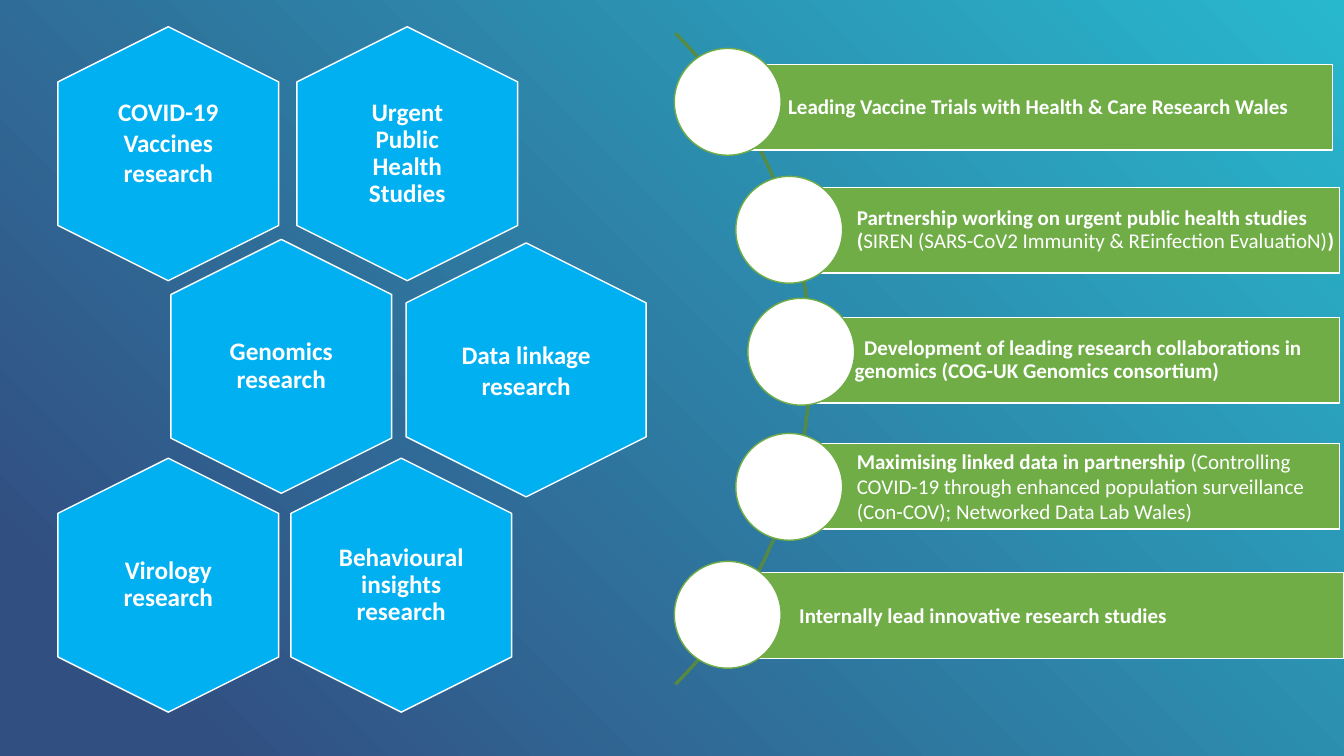
from pptx import Presentation
from pptx.dml.color import RGBColor
from pptx.enum.shapes import MSO_SHAPE
from pptx.enum.text import MSO_ANCHOR, PP_ALIGN
from pptx.util import Pt

COLORS = {
    "navy": "324F82",
    "teal": "28B8CE",
    "blue": "00B0F0",
    "green": "70AD47",
    "arc": "5A8B39",
    "white": "FFFFFF",
}
HEX_LENGTH, HEX_WIDTH = 181.4, 157.7
LABEL_WIDTH, LABEL_HEIGHT = 108.7, 124.6
BAR_HEIGHT, CIRCLE_SIZE = 61.2, 76.3

TOPICS = [
    ("Urgent Public Health Studies", 290.9, 109.8, HEX_WIDTH, 0.9, 0),
    ("COVID-19 Vaccines research", 120.2, 109.8, HEX_WIDTH, 1, -8.3),
    ("Genomics research", 200.9, 261.7, HEX_WIDTH, 0.9, 0),
    ("Data linkage research", 375.8, 264.2, 171.4, 1, 0),
    ("Behavioural insights research", 286.6, 418, HEX_WIDTH, 0.9, 0),
    ("Virology research", 120.2, 418, HEX_WIDTH, 0.9, 0),
]

ACTIVITIES = [
    ((514.8, 46.1, 437), (481.7, 34.6), 0.9, 0,
     [("Leading Vaccine Trials with Health & Care Research Wales", True)]),
    ((563.8, 133.9, 393.1), (525.6, 126), 0.9, 0,
     [("Partnership working on urgent public health studies (", True),
      ("SIREN (SARS-CoV2 Immunity & REinfection EvaluatioN)", False),
      (")", True)]),
    ((562.3, 226.8, 394.6), (534.2, 213.1), 0.9, 6.8,
     [("Development of leading research collaborations in genomics "
       "(COG-UK Genomics consortium)", True)]),
    ((563.8, 316.8, 393.1), (525.6, 309.6), 1, 0,
     [("Maximising linked data in partnership ", True),
      ("(Controlling COVID-19 through enhanced population surveillance "
       "(Con-COV); Networked Data Lab Wales)", False)]),
    ((522.7, 409, 437), (481.7, 401), 1, 0,
     [("Internally lead innovative research studies", True)]),
]


def rgb(name):
    return RGBColor.from_string(COLORS[name])


def set_background(s):
    fill = s.background.fill
    fill.gradient()
    fill.gradient_angle = 45
    for stop, position, name in zip(fill.gradient_stops, (0.1, 1), ("navy", "teal")):
        stop.position = position
        stop.color.rgb = rgb(name)


def add_preset(s, kind, left, top, width, height, fill, line):
    sp = s.shapes.add_shape(kind, Pt(left), Pt(top), Pt(width), Pt(height))
    sp.shadow.inherit = False
    if fill:
        sp.fill.solid()
        sp.fill.fore_color.rgb = rgb(fill)
    else:
        sp.fill.background()
    sp.line.color.rgb = rgb(line)
    sp.line.width = Pt(1)
    return sp


def write_text(sp, runs, size, align, spacing, insets):
    tf = sp.text_frame
    tf.word_wrap = True
    tf.vertical_anchor = MSO_ANCHOR.MIDDLE
    tf.margin_left, tf.margin_top, tf.margin_right, tf.margin_bottom = map(Pt, insets)
    p = tf.paragraphs[0]
    p.alignment = align
    p.line_spacing = spacing
    for text, bold in runs:
        r = p.add_run()
        r.text = text
        r.font.name = "Calibri"
        r.font.size = Pt(size)
        r.font.bold = bold
        r.font.color.rgb = rgb("white")
    return p


def add_topic(s, text, x, y, width, spacing, shift):
    sp = add_preset(s, MSO_SHAPE.HEXAGON, x - HEX_LENGTH / 2, y - width / 2,
                    HEX_LENGTH, width, "blue", "white")
    sp.rotation = 90
    label = s.shapes.add_textbox(Pt(x - LABEL_WIDTH / 2), Pt(y - LABEL_HEIGHT / 2 + shift),
                                 Pt(LABEL_WIDTH), Pt(LABEL_HEIGHT))
    write_text(label, [(text, True)], 18, PP_ALIGN.CENTER, spacing, (5, 5, 5, 5))


def add_arc(s):
    sp = add_preset(s, MSO_SHAPE.BLOCK_ARC, -78.5, -72.7, 658.1, 658.1, None, "arc")
    for i, value in enumerate((189, 27, 0.002)):
        sp.adjustments[i] = value


def add_activity(s, bar, circle, spacing, indent, runs):
    sp = add_preset(s, MSO_SHAPE.RECTANGLE, *bar, BAR_HEIGHT, "green", "white")
    p = write_text(sp, runs, 15, PP_ALIGN.LEFT, spacing, (48.2, 2.9, 2, 2.9))
    if indent:
        p._p.get_or_add_pPr().set("indent", str(Pt(indent)))
    add_preset(s, MSO_SHAPE.OVAL, *circle, CIRCLE_SIZE, CIRCLE_SIZE, "white", "green")


def main():
    prs = Presentation()
    prs.slide_width, prs.slide_height = Pt(960), Pt(540)
    s = prs.slides.add_slide(prs.slide_layouts[6])
    set_background(s)
    for topic in TOPICS:
        add_topic(s, *topic)
    add_arc(s)
    for activity in ACTIVITIES:
        add_activity(s, *activity)
    prs.save("out.pptx")


if __name__ == "__main__":
    main()
